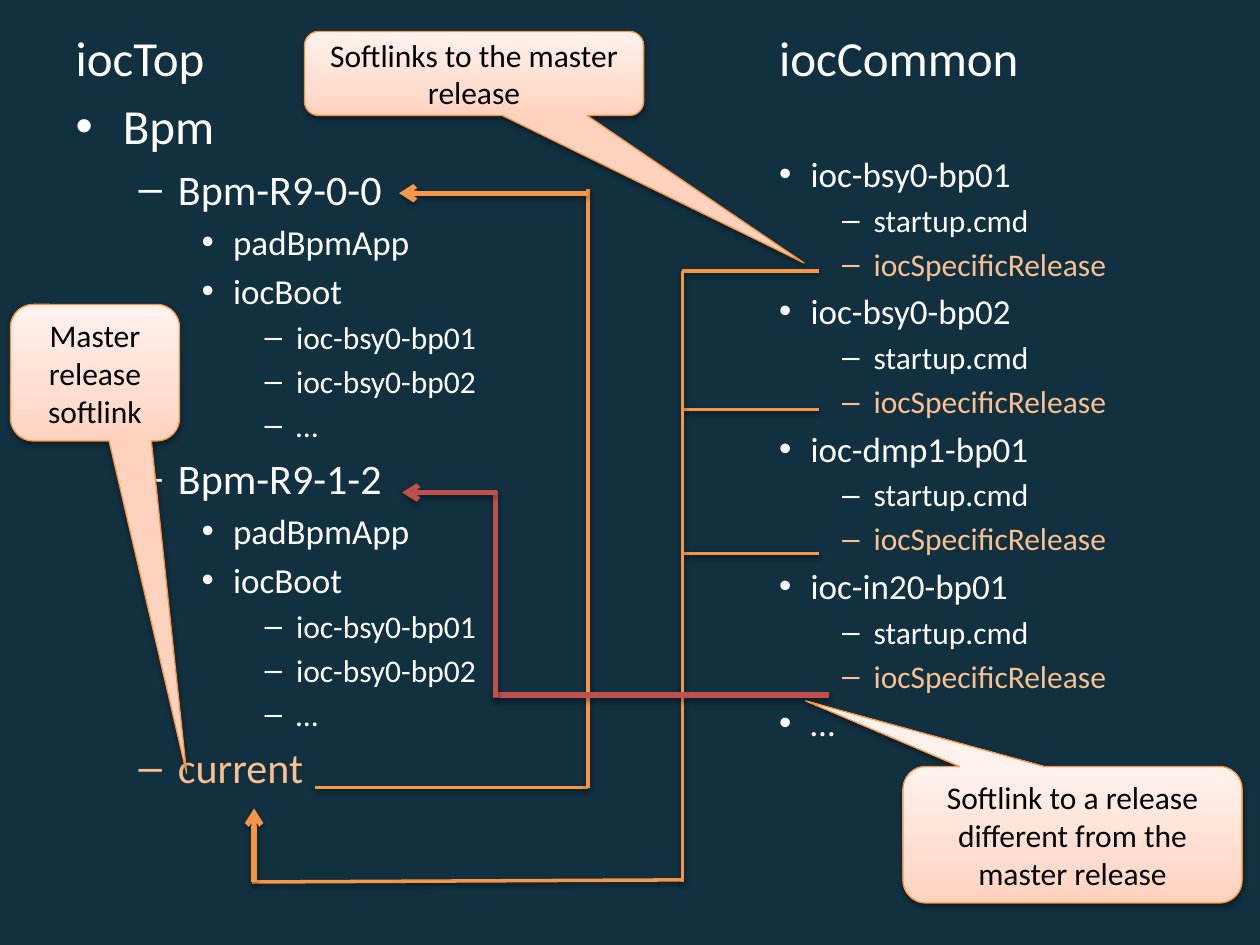
from copy import deepcopy
from typing import NamedTuple

from lxml import etree
from pptx import Presentation, util as u
from pptx.dml.color import RGBColor
from pptx.enum import shapes, text
from pptx.oxml.ns import qn

COLS, ROWS = 120, 90
WHITE, BLACK, PEACH = "FFFFFF", "000000", "FAC090"
ORANGE, RED = "F79646", "C0504D"
LEVEL_SIZES = [28, 24, 20, 18]
GRADIENT = [(0, "FFD2BD"), (0.35, "FFDED0"), (1, "FFF2ED")]


class Line(NamedTuple):
    """A straight line between two grid points."""
    x1: float
    y1: float
    x2: float
    y2: float
    color: str = ORANGE
    width: float = 2
    arrow: bool = False


class Callout(NamedTuple):
    left: float
    top: float
    width: float
    height: float
    tip: tuple[float, float]
    lines: list[str]


class Item(NamedTuple):
    level: int
    text: str
    color: str = WHITE


def release(name: str) -> list[Item]:
    boots = ["ioc-bsy0-bp01", "ioc-bsy0-bp02", "…"]
    return [Item(1, name), Item(2, "padBpmApp"), Item(2, "iocBoot"),
            *[Item(3, boot) for boot in boots]]


def ioc(name: str) -> list[Item]:
    return [Item(2, name), Item(3, "startup.cmd"),
            Item(3, "iocSpecificRelease", PEACH)]


TOP_ITEMS = [Item(0, "Bpm"), *release("Bpm-R9-0-0"), *release("Bpm-R9-1-2"),
             Item(1, "current", PEACH)]
IOCS = ["ioc-bsy0-bp01", "ioc-bsy0-bp02", "ioc-dmp1-bp01", "ioc-in20-bp01"]
COMMON_ITEMS = [item for name in IOCS for item in ioc(name)] + [Item(2, "…")]

LINES = [
    Line(30, 75, 56, 75),
    Line(56, 75, 56, 18),
    Line(56, 18.4, 38, 18.4, width=3, arrow=True),
    *[Line(78, y, 65, y) for y in (25.8, 39, 52.7)],
    Line(65, 84, 65, 25.8),
    Line(65, 83.8, 24, 84),
    Line(24.2, 84, 24.2, 77, width=3, arrow=True),
    Line(79, 66.2, 47, 66.2, RED, 3),
    Line(47.2, 66.4, 47.2, 46.8, RED, 3),
    Line(47.3, 46.9, 38.3, 46.9, RED, 3, True),
]
CALLOUTS = [
    Callout(86, 73, 32.3, 13, (-0.787, -0.981),
            ["Softlink to a release different from the master release"]),
    Callout(29, 3, 32.3, 8, (0.973, 2.256),
            ["Softlinks to the master release"]),
    Callout(1, 29, 16.1, 13, (0.542, 2.936), ["Master release", "softlink"]),
]


def rgb(color: str) -> RGBColor:
    return RGBColor.from_string(color)


def grid(*values: float) -> list[int]:
    """Lengths in grid cells; columns and rows have the same size."""
    return [u.Inches(value * 10 / COLS) for value in values]


def add_text(tf, string: str, *, size: float, color: str, level: int = 0,
             align=None, before: float | None = None,
             indent: float | None = None) -> None:
    """Fill the empty first paragraph or add one; indent removes the bullet."""
    p = tf.paragraphs[0] if not tf.text else tf.add_paragraph()
    p.level = level
    if indent is not None:
        p_pr = p._p.get_or_add_pPr()
        p_pr.set("marL", str(u.Inches(indent)))
        p_pr.set("indent", "0")
        etree.SubElement(p_pr, qn("a:buNone"))
    if align is not None:
        p.alignment = align
    if before is not None:
        p.space_before = u.Pt(before)
    r = p.add_run()
    r.text = string
    r.font.name = "Calibri"
    r.font.size = u.Pt(size)
    r.font.color.rgb = rgb(color)


def add_shadow(sp, opacity: int, distance: float) -> None:
    sp_pr = sp._element.spPr
    effects = sp_pr.find(qn("a:effectLst"))
    if effects is None:
        effects = etree.SubElement(sp_pr, qn("a:effectLst"))
    shadow = etree.SubElement(
        effects, qn("a:outerShdw"), blurRad=str(u.Pt(3.1)),
        dist=str(u.Pt(distance)), dir="5400000", rotWithShape="0")
    color = etree.SubElement(shadow, qn("a:srgbClr"), val=BLACK)
    etree.SubElement(color, qn("a:alpha"), val=str(opacity * 1000))


def fill_listing(sp, left: float, heading: str, items: list[Item],
                 indent: float = 0, gap: float | None = None) -> None:
    """Write a heading and its tree of items; gap sets the heading apart."""
    sp.left, sp.top, sp.width, sp.height = grid(left, 2, 53, 78.4)
    tf = sp.text_frame
    tf.auto_size = text.MSO_AUTO_SIZE.NONE
    add_text(tf, heading, size=28, color=WHITE, before=0, indent=indent)
    for i, item in enumerate(items):
        add_text(tf, item.text, size=LEVEL_SIZES[item.level], color=item.color,
                 level=item.level, before=gap if i == 0 else None)


def add_line(slide, line: Line) -> None:
    sp = slide.shapes.add_connector(
        shapes.MSO_CONNECTOR.STRAIGHT,
        *grid(line.x1, line.y1, line.x2, line.y2))
    sp.line.color.rgb = rgb(line.color)
    sp.line.width = u.Pt(line.width)
    if line.arrow:
        etree.SubElement(sp.line._get_or_add_ln(), qn("a:tailEnd"), type="arrow")
    if line.width == 3:
        add_shadow(sp, 35, 1.8)
    else:
        add_shadow(sp, 38, 1.6)


def add_gradient(sp) -> None:
    sp.fill.gradient()
    sp.fill.gradient_angle = 90
    stops = sp._element.spPr.find(qn("a:gradFill")).find(qn("a:gsLst"))
    stops.append(deepcopy(stops[-1]))
    for stop, (position, color) in zip(sp.fill.gradient_stops, GRADIENT):
        stop.position = position
        stop.color.rgb = rgb(color)


def add_callout(slide, callout: Callout) -> None:
    sp = slide.shapes.add_shape(
        shapes.MSO_SHAPE.ROUNDED_RECTANGULAR_CALLOUT, *grid(*callout[:4]))
    for i, value in enumerate((*callout.tip, 0.167)):
        sp.adjustments[i] = value
    add_gradient(sp)
    sp.line.color.rgb = rgb("F69240")
    sp.line.width = u.Pt(0.75)
    sp.shadow.inherit = False
    add_shadow(sp, 38, 1.6)
    tf = sp.text_frame
    tf.word_wrap = True
    tf.vertical_anchor = text.MSO_ANCHOR.MIDDLE
    for string in callout.lines:
        add_text(tf, string, size=18, color=BLACK, align=text.PP_ALIGN.CENTER)


def main() -> None:
    prs = Presentation()
    prs.slide_width, prs.slide_height = grid(COLS, ROWS)
    slide = prs.slides.add_slide(prs.slide_layouts.get_by_name("Two Content"))
    slide.background.fill.solid()
    slide.background.fill.fore_color.rgb = rgb("113040")
    title, top, common = slide.placeholders
    title._element.getparent().remove(title._element)
    fill_listing(top, 6, "iocTop", TOP_ITEMS)
    fill_listing(common, 61, "iocCommon", COMMON_ITEMS, indent=1, gap=38)
    for line in LINES:
        add_line(slide, line)
    for callout in CALLOUTS:
        add_callout(slide, callout)
    prs.save("out.pptx")


if __name__ == "__main__":
    main()
